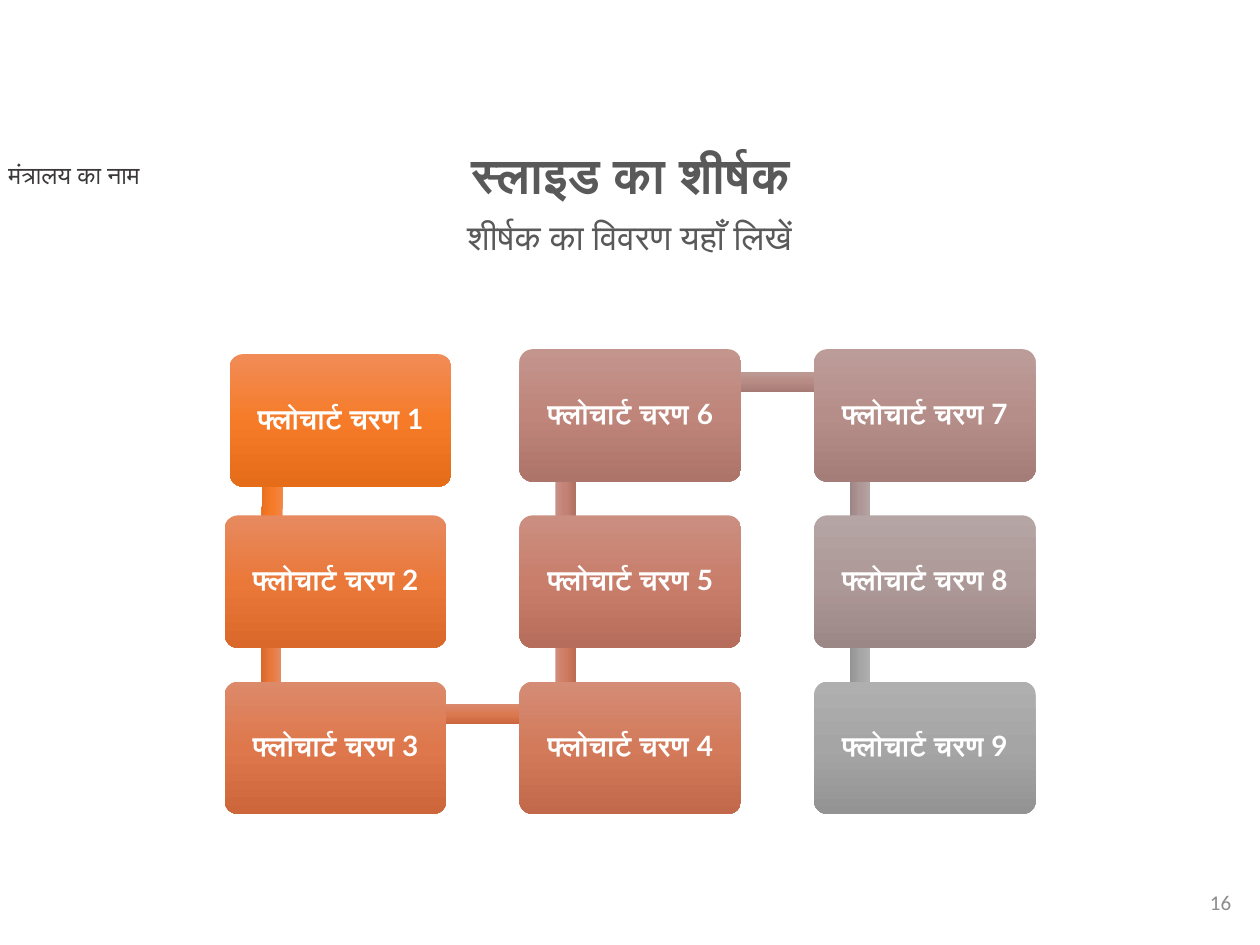
from copy import deepcopy
from dataclasses import dataclass
from itertools import pairwise
from math import atan2, degrees, hypot

from pptx import Presentation
from pptx.dml.color import RGBColor
from pptx.enum.shapes import MSO_SHAPE
from pptx.enum.text import MSO_ANCHOR, PP_ALIGN
from pptx.oxml.ns import qn
from pptx.util import Cm, Pt


@dataclass(frozen=True)
class Theme:
    body_font: str = "Calibri"
    step_font: str = "Lato"
    ministry: str = "3B3838"
    heading: str = "595959"
    page: str = "8C8C8C"
    step_text: str = "FFFFFF"
    ministry_size: int = 14
    title_size: int = 28
    subtitle_size: int = 20
    step_size: int = 16
    page_size: int = 12
    boxes: tuple = (
        ("F18C57", "F67B28", "E56C19"),
        ("E78A60", "EA7839", "D9682A"),
        ("DD8A6A", "DE774B", "CD673B"),
        ("D48C76", "D37A5B", "C2694B"),
        ("CB8F81", "C97E6B", "B76D5B"),
        ("C3958D", "BF857B", "AD7469"),
        ("BC9C99", "B68E89", "A47C78"),
        ("B5A5A4", "AD9998", "9B8786"),
        ("AFAFAF", "A5A5A5", "939393"),
    )
    bars: tuple = (
        ("F18C57", "F67B28", "E56C19"),
        ("E58A61", "E8783C", "D7682C"),
        ("DA8A6E", "DB7850", "CA673F"),
        ("D08D7B", "CF7B62", "BD6B52"),
        ("C79288", "C38274", "B17163"),
        ("BE9A95", "B88B85", "A67A74"),
        ("B6A4A2", "AE9796", "9C8584"),
        ("AFAFAF", "A5A5A5", "939393"),
    )


THEME = Theme()
GRID_LEFT, GRID_TOP = 4.53, 7.04
COL_STEP, ROW_STEP = 5.94, 3.35
ROWS = 3
BOX_W, BOX_H = 4.47, 2.67
ANCHOR_X, ANCHOR_Y = 0.93, 0.66
BAR_H = 0.41
FIRST_SHIFT = 0.1


def write(tf, text, font, size, color, bold=False, align=PP_ALIGN.LEFT, spacing=1.0):
    tf.word_wrap = True
    p = tf.paragraphs[0]
    p.text = text
    p.alignment = align
    p.line_spacing = spacing
    r = p.runs[0]
    r.font.name = font
    r.font.size = Pt(size)
    r.font.bold = bold
    r.font.color.rgb = RGBColor.from_string(color)


def add_text(s, box, text, size, color, anchor=MSO_ANCHOR.TOP, **style):
    tf = s.shapes.add_textbox(*map(Cm, box)).text_frame
    tf.vertical_anchor = anchor
    write(tf, text, THEME.body_font, size, color, **style)


def add_gradient_shape(s, kind, box, colors):
    sp = s.shapes.add_shape(kind, *map(Cm, box))
    sp.shadow.inherit = False
    sp.line.fill.background()
    sp.fill.gradient()
    sp.fill.gradient_angle = 270
    stops = sp._element.spPr.find(".//" + qn("a:gsLst"))
    stops.append(deepcopy(stops[0]))
    for stop, position, color in zip(sp.fill.gradient_stops, (0, 0.5, 1), colors):
        stop.position = position
        stop.color.rgb = RGBColor.from_string(color)
    return sp


def add_bar(s, start, end, colors):
    (x1, y1), (x2, y2) = [(x + ANCHOR_X, y + ANCHOR_Y) for x, y in (start, end)]
    length = hypot(x2 - x1, y2 - y1)
    left, top = (x1 + x2 - length) / 2, (y1 + y2 - BAR_H) / 2
    sp = add_gradient_shape(s, MSO_SHAPE.RECTANGLE, (left, top, length, BAR_H), colors)
    sp.rotation = degrees(atan2(y2 - y1, x2 - x1)) % 360


def add_step(s, number, corner, colors):
    sp = add_gradient_shape(s, MSO_SHAPE.ROUNDED_RECTANGLE, (*corner, BOX_W, BOX_H), colors)
    sp.adjustments[0] = 0.1
    tf = sp.text_frame
    tf.margin_left = tf.margin_right = tf.margin_top = tf.margin_bottom = Cm(0.18)
    tf.vertical_anchor = MSO_ANCHOR.MIDDLE
    write(tf, f"फ्लोचार्ट चरण {number}", THEME.step_font, THEME.step_size,
          THEME.step_text, bold=True, align=PP_ALIGN.CENTER, spacing=0.9)


def step_corner(index):
    col, row = divmod(index, ROWS)
    if col % 2:
        row = ROWS - 1 - row
    shift = FIRST_SHIFT if index == 0 else 0
    return GRID_LEFT + col * COL_STEP + shift, GRID_TOP + row * ROW_STEP + shift


def add_flowchart(s):
    corners = [step_corner(i) for i in range(len(THEME.boxes))]
    for (start, end), colors in zip(pairwise(corners), THEME.bars):
        add_bar(s, start, end, colors)
    for number, (corner, colors) in enumerate(zip(corners, THEME.boxes), 1):
        add_step(s, number, corner, colors)


def main():
    prs = Presentation()
    prs.slide_width, prs.slide_height = Cm(25.4), Cm(19.05)
    s = prs.slides.add_slide(prs.slide_layouts[6])
    add_text(s, (-0.08, 3.1, 5.54, 0.86), "मंत्रालय का नाम",
             THEME.ministry_size, THEME.ministry)
    add_flowchart(s)
    add_text(s, (19.35, 17.68, 5.72, 1.02), "16", THEME.page_size, THEME.page,
             anchor=MSO_ANCHOR.MIDDLE, align=PP_ALIGN.RIGHT)
    add_text(s, (3.71, 4.32, 17.96, 1.6), "शीर्षक का विवरण यहाँ लिखें",
             THEME.subtitle_size, THEME.heading, align=PP_ALIGN.CENTER, spacing=0.9)
    add_text(s, (4.72, 2.92, 15.98, 1.19), "स्लाइड का शीर्षक", THEME.title_size,
             THEME.heading, bold=True, align=PP_ALIGN.CENTER, spacing=0.9)
    prs.save("out.pptx")


if __name__ == "__main__":
    main()
